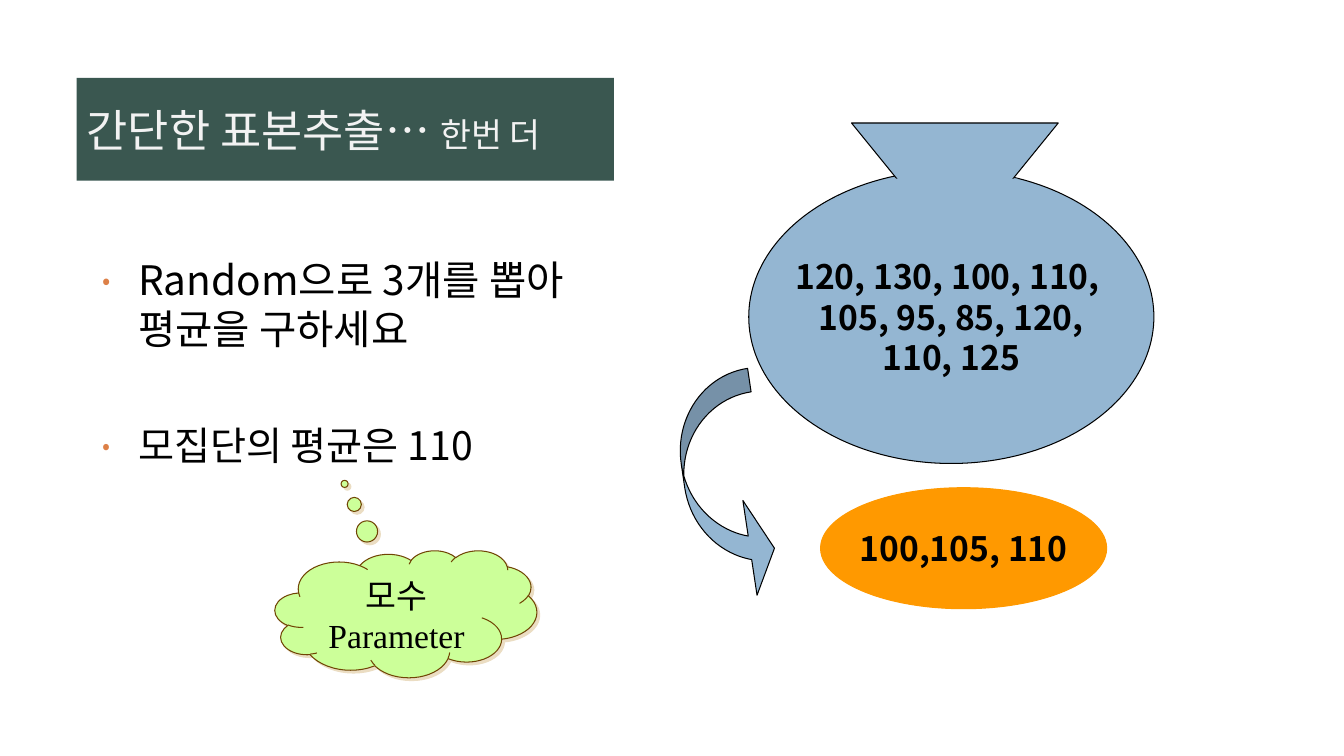
from lxml.etree import SubElement
from pptx import Presentation
from pptx.dml.color import RGBColor
from pptx.enum.shapes import MSO_SHAPE
from pptx.enum.text import MSO_ANCHOR, PP_ALIGN
from pptx.oxml import parse_xml
from pptx.oxml.ns import nsdecls, qn
from pptx.util import Cm, Pt

GREEN = RGBColor(0x3A, 0x57, 0x50)
PALE = RGBColor(0xF2, 0xF2, 0xF2)
BLACK = RGBColor(0, 0, 0)
BLUE = RGBColor(0x94, 0xB6, 0xD2)
ORANGE = RGBColor(0xFF, 0x99, 0x00)
LIME = RGBColor(0xCC, 0xFF, 0x99)
BROWN = RGBColor(0x70, 0x44, 0x04)
SAND = RGBColor(0xEB, 0xDD, 0xC3)
RUST = RGBColor(0xDD, 0x80, 0x47)
SANS = "Noto Sans CJK KR"
SERIF = "Times New Roman"


def style(run, size, color=BLACK, face=SANS, bold=False):
    font = run.font
    font.name, font.size, font.bold = face, Pt(size), bold
    font.color.rgb = color
    SubElement(run._r.get_or_add_rPr(), qn("a:ea")).set("typeface", face)


def paint(shape, fill, line=None):
    shape.shadow.inherit = False
    shape.fill.solid()
    shape.fill.fore_color.rgb = fill
    if line is None:
        shape.line.fill.background()
    else:
        shape.line.color.rgb = line
        shape.line.width = Pt(0.75)


def add_form(parent, kind, box, fill, line=None, adjust=()):
    shape = parent.shapes.add_shape(kind, *map(Cm, box))
    paint(shape, fill, line)
    for index, value in enumerate(adjust):
        shape.adjustments[index] = value
    return shape


def add_label(shape, lines, faces, bold, anchor, wrap):
    frame = shape.text_frame
    frame.text = "\n".join(lines)
    frame.word_wrap = wrap
    frame.vertical_anchor = anchor
    for para, face in zip(frame.paragraphs, faces):
        para.alignment = PP_ALIGN.CENTER
        style(para.runs[0], 24, face=face, bold=bold)


def add_title(slide):
    title = slide.shapes.title
    title.left, title.top, title.width, title.height = map(Cm, (1.93, 1.96, 13.54, 2.59))
    title.fill.solid()
    title.fill.fore_color.rgb = GREEN
    frame = title.text_frame
    frame.vertical_anchor = MSO_ANCHOR.MIDDLE
    para = frame.paragraphs[0]
    para.alignment = PP_ALIGN.LEFT
    for text, size in (("간단한 표본추출… ", 32), ("한번 더", 24)):
        run = para.add_run()
        run.text = text
        style(run, size, PALE)


def add_bullet(para):
    props = para._p.get_or_add_pPr()
    props.set("marL", str(Cm(0.89)))
    props.set("indent", str(Cm(-0.89)))
    color = SubElement(props, qn("a:buClr"))
    SubElement(color, qn("a:srgbClr")).set("val", str(RUST))
    SubElement(props, qn("a:buSzPct")).set("val", "60000")
    SubElement(props, qn("a:buFont")).set("typeface", SANS)
    SubElement(props, qn("a:buChar")).set("char", "•")


def add_body(slide):
    frame = slide.shapes.add_textbox(*map(Cm, (2.34, 6.3, 13.39, 8.99))).text_frame
    frame.word_wrap = True
    frame.text = "Random으로 3개를 뽑아 평균을 구하세요\n모집단의 평균은 110"
    for para, size, gap in zip(frame.paragraphs, (29, 28), (0, 49)):
        para.space_before = Pt(gap)
        add_bullet(para)
        style(para.runs[0], size)


def add_cloud(slide):
    cloud = add_form(slide, MSO_SHAPE.CLOUD_CALLOUT, (6.93, 13.87, 6.6, 3.2),
                     LIME, BROWN, (-0.234, -1.024))
    add_label(cloud, ("모수", "Parameter"), (SANS, SERIF), False, MSO_ANCHOR.TOP, True)
    props = cloud._element.spPr
    props.remove(props.find(qn("a:effectLst")))
    props.append(parse_xml(
        f'<a:effectLst {nsdecls("a")}><a:outerShdw dist="{Pt(2.8)}" dir="2700000" '
        f'algn="ctr" rotWithShape="0"><a:srgbClr val="{SAND}"/></a:outerShdw></a:effectLst>'))


def add_bag(slide):
    bag = slide.shapes.add_group_shape()
    belly = add_form(bag, MSO_SHAPE.OVAL, (18.87, 4.29, 10.21, 7.39), BLUE, BLACK)
    add_label(belly, ("120, 130, 100, 110, ", "105, 95, 85, 120,", "110, 125"),
              (SANS,) * 3, True, MSO_ANCHOR.MIDDLE, False)
    neck = bag.shapes.build_freeform(Cm(21.46), Cm(3.1))
    points = ((22.76, 4.7), (25.37, 4.7), (26.67, 3.1))
    neck.add_line_segments([(Cm(x), Cm(y)) for x, y in points])
    paint(neck.convert_to_shape(), BLUE, BLACK)
    add_form(bag, MSO_SHAPE.RECTANGLE, (22.45, 4.5, 3.2, 0.79), BLUE)


def main():
    deck = Presentation()
    deck.slide_width, deck.slide_height = Cm(33.87), Cm(19.05)
    slide = deck.slides.add_slide(deck.slide_layouts[5])
    add_title(slide)
    add_body(slide)
    arrow = add_form(slide, MSO_SHAPE.CURVED_RIGHT_ARROW, (17.27, 9.4, 2.01, 5.79),
                     BLUE, BLACK, (0.298, 1.201, 0.303))
    arrow.rotation = 351.5
    sample = add_form(slide, MSO_SHAPE.OVAL, (20.68, 12.29, 7.21, 3.05), ORANGE, ORANGE)
    add_label(sample, ("100,105, 110",), (SANS,), True, MSO_ANCHOR.MIDDLE, False)
    add_cloud(slide)
    add_bag(slide)
    deck.save("out.pptx")


if __name__ == "__main__":
    main()
